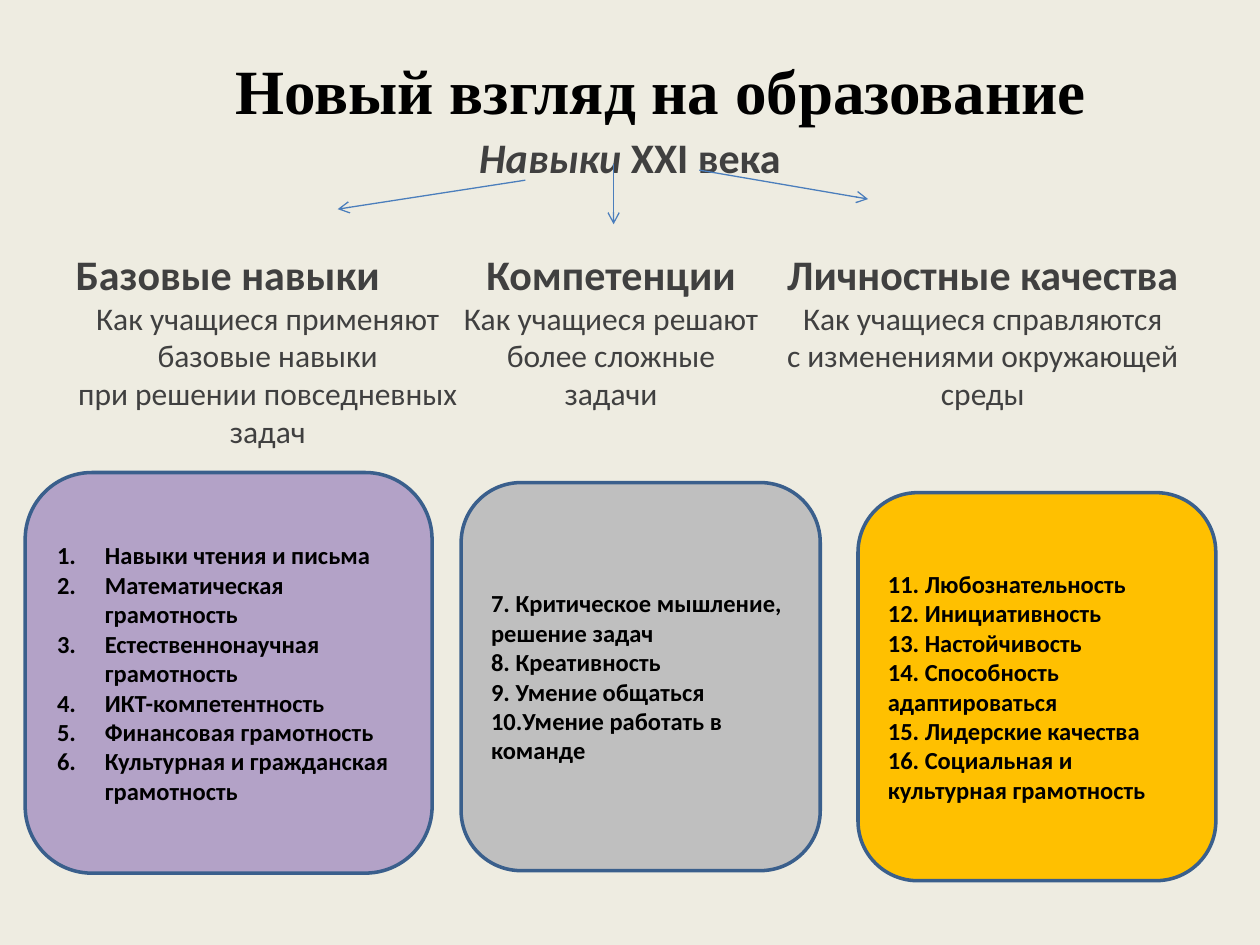
from lxml import etree
from pptx import Presentation
from pptx.dml.color import RGBColor
from pptx.enum import shapes, text
from pptx.oxml import ns
from pptx.util import Inches, Pt

BACK = RGBColor(0xEE, 0xEC, 0xE1)
BLACK = RGBColor(0, 0, 0)
GREY = RGBColor(0x40, 0x40, 0x40)
EDGE = RGBColor(0x3A, 0x5F, 0x8C)
BLUE = RGBColor(0x4B, 0x7E, 0xBC)
LILAC = RGBColor(0xB3, 0xA2, 0xC7)
SILVER = RGBColor(0xBF, 0xBF, 0xBF)
GOLD = RGBColor(0xFF, 0xC0, 0x00)
LEFT, MID = text.PP_ALIGN.LEFT, text.PP_ALIGN.CENTER

HEADS = [
    (0.6, 3.05, LEFT, "Базовые навыки",
     "Как учащиеся применяют\vбазовые навыки\vпри решении повседневных\vзадач"),
    (3.65, 2.4, MID, "Компетенции",
     "Как учащиеся решают\vболее сложные\vзадачи"),
    (6.15, 3.3, MID, "Личностные качества",
     "Как учащиеся справляются\vс изменениями окружающей\vсреды"),
]
CARDS = [
    ((0.2, 3.75, 3.23, 3.18), LILAC, True,
     ["Навыки чтения и письма", "Математическая грамотность",
      "Естественнонаучная грамотность", "ИКТ-компетентность",
      "Финансовая грамотность", "Культурная и гражданская грамотность"]),
    ((3.66, 3.83, 2.85, 3.08), SILVER, False,
     ["7. Критическое мышление, решение задач", "8. Креативность",
      "9. Умение общаться", "10.Умение работать в команде"]),
    ((6.81, 3.91, 2.84, 3.08), GOLD, False,
     ["11. Любознательность", "12. Инициативность", "13. Настойчивость",
      "14. Способность адаптироваться", "15. Лидерские качества",
      "16. Социальная и культурная грамотность"]),
]
ARROWS = [(4.17, 1.43, 2.68, 1.66), (4.87, 1.3, 4.87, 1.78), (5.55, 1.35, 6.89, 1.58)]


def place(shape, *box):
    """Move and size a shape, in inches."""
    shape.left, shape.top, shape.width, shape.height = map(Inches, box)


def style(para, size, color, bold=True, face="Calibri", align=LEFT):
    """Format a paragraph and its runs."""
    para.alignment = align
    for run in para.runs:
        run.font.size, run.font.bold, run.font.name = Pt(size), bold, face
        run.font.color.rgb = color


def indent(para, tag, gap=0.0, **attrs):
    """Set a hanging indent and the bullet kind."""
    props = para._p.get_or_add_pPr()
    props.set("marL", str(Inches(gap)))
    props.set("indent", str(-Inches(gap)))
    etree.SubElement(props, ns.qn(tag), **attrs)


def titles(slide):
    """Fill the title and the subtitle line."""
    title, body = slide.placeholders
    place(title, 1.54, 0, 7.41, 1.42)
    title.text_frame.text = "Новый взгляд на образование"
    style(title.text_frame.paragraphs[0], 36, BLACK, face="Times New Roman", align=MID)
    place(body, 0.5, 0.99, 9, 0.55)
    para = body.text_frame.paragraphs[0]
    for part in ("Навыки ", "XXI века"):
        para.add_run().text = part
    style(para, 24, GREY, align=MID)
    para.runs[0].font.italic = True
    indent(para, "a:buNone")


def head(slide, left, width, align, name, note):
    """Add a column heading with its note."""
    frame = slide.shapes.add_textbox(
        Inches(left), Inches(1.92), Inches(width), Inches(1.75)).text_frame
    frame.word_wrap = True
    frame.margin_left = frame.margin_right = 0
    frame.text = name
    style(frame.paragraphs[0], 24, GREY, align=align)
    para = frame.add_paragraph()
    para.text = note
    style(para, 18, GREY, bold=False, align=MID)


def card(slide, box, fill, auto, items):
    """Add a rounded card with a list of skills."""
    shape = slide.shapes.add_shape(
        shapes.MSO_SHAPE.FLOWCHART_ALTERNATE_PROCESS, *map(Inches, box))
    shape.shadow.inherit = False
    shape.fill.solid()
    shape.fill.fore_color.rgb = fill
    shape.line.color.rgb, shape.line.width = EDGE, Pt(2)
    frame = shape.text_frame
    frame.word_wrap = True
    frame.vertical_anchor = text.MSO_ANCHOR.MIDDLE
    frame.text = "\n".join(items)
    for para in frame.paragraphs:
        style(para, 14, BLACK)
        if auto:
            indent(para, "a:buAutoNum", 0.38, type="arabicPeriod")


def arrow(slide, *ends):
    """Add a thin line with an open arrowhead."""
    line = slide.shapes.add_connector(
        shapes.MSO_CONNECTOR.STRAIGHT, *map(Inches, ends))
    line.line.color.rgb, line.line.width = BLUE, Pt(0.75)
    etree.SubElement(line.line._get_or_add_ln(), ns.qn("a:tailEnd"), type="arrow")
    etree.SubElement(line._element.spPr, ns.qn("a:effectLst"))


def main():
    """Build the slide and save it."""
    deck = Presentation()
    deck.slide_width, deck.slide_height = Inches(10), Inches(7.5)
    slide = deck.slides.add_slide(deck.slide_layouts[1])
    slide.background.fill.solid()
    slide.background.fill.fore_color.rgb = BACK
    titles(slide)
    for row in HEADS:
        head(slide, *row)
    for row in CARDS:
        card(slide, *row)
    for ends in ARROWS:
        arrow(slide, *ends)
    deck.save("out.pptx")


if __name__ == "__main__":
    main()
